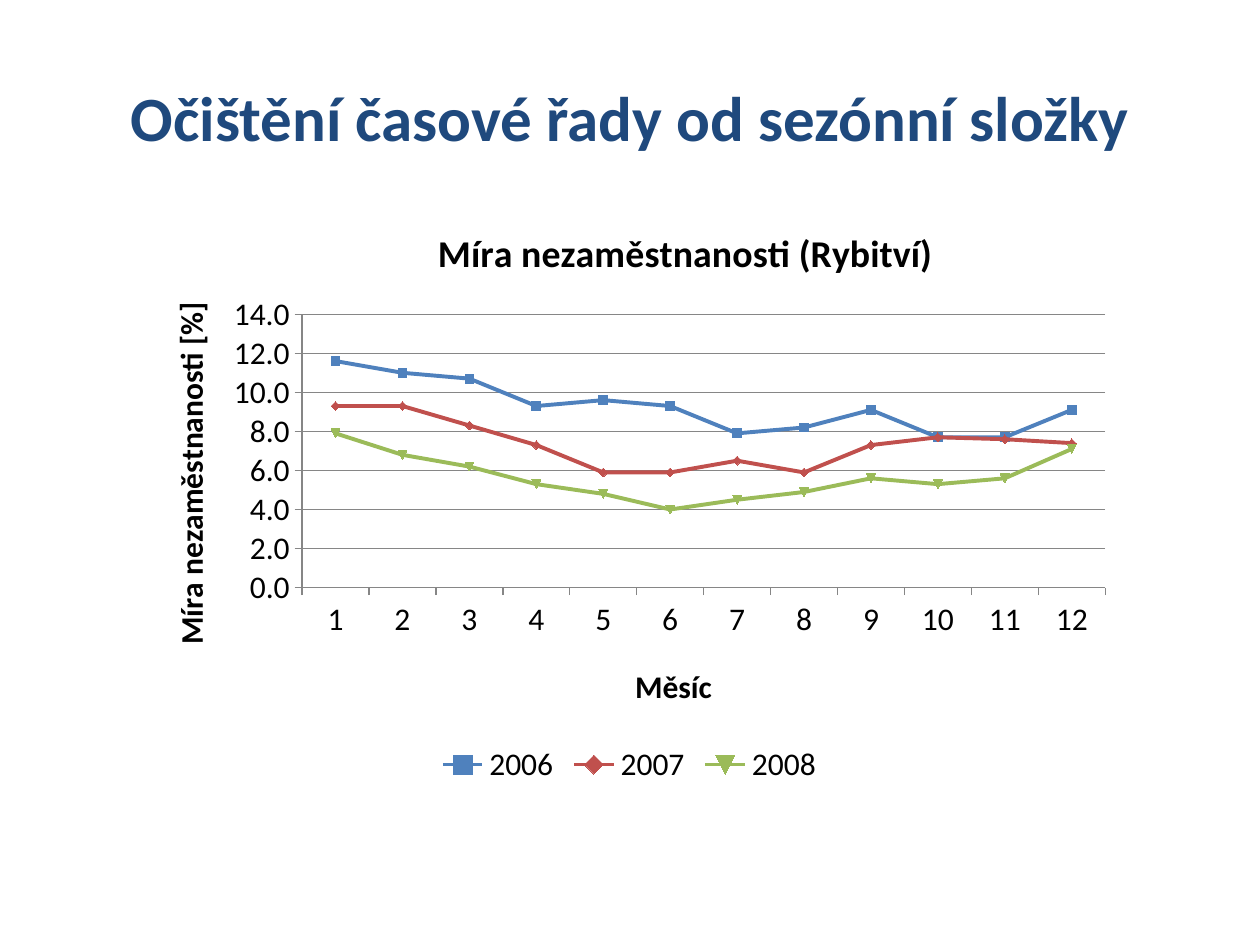
"""Build a slide with a line chart of monthly unemployment over three years."""
import pptx
import pptx.chart.data
import pptx.dml.color
import pptx.enum.chart
import pptx.enum.text
import pptx.oxml
import pptx.oxml.ns
import pptx.util

COLORS = {"heading": "1F497D", "text": "000000", "grid": "868686",
          "2006": "4F81BD", "2007": "C0504D", "2008": "9BBB59"}
FONT = "Calibri"
RATES = {
    "2006": (11.6, 11, 10.7, 9.3, 9.6, 9.3, 7.9, 8.2, 9.1, 7.7, 7.7, 9.1),
    "2007": (9.3, 9.3, 8.3, 7.3, 5.9, 5.9, 6.5, 5.9, 7.3, 7.7, 7.6, 7.4),
    "2008": (7.9, 6.8, 6.2, 5.3, 4.8, 4, 4.5, 4.9, 5.6, 5.3, 5.6, 7.1),
}


def style(font, size, color, bold):
    font.name = FONT
    font.size = pptx.util.Pt(size)
    font.bold = bold
    font.color.rgb = pptx.dml.color.RGBColor.from_string(COLORS[color])


def place(parent, index, **shares):
    for old in parent.findall(pptx.oxml.ns.qn("c:layout")):
        parent.remove(old)
    modes = '<c:xMode val="edge"/><c:yMode val="edge"/>'
    target = '<c:layoutTarget val="inner"/>' if "w" in shares else ""
    values = "".join(f'<c:{key} val="{share}"/>' for key, share in shares.items())
    parent.insert(index, pptx.oxml.parse_xml(
        f'<c:layout {pptx.oxml.ns.nsdecls("c")}><c:manualLayout>'
        f'{target}{modes}{values}</c:manualLayout></c:layout>'))


deck = pptx.Presentation()
deck.slide_width = pptx.util.Inches(10)
deck.slide_height = pptx.util.Inches(7.5)
slide = deck.slides.add_slide(deck.slide_layouts[6])
width, height = deck.slide_width, deck.slide_height

heading = slide.shapes.add_textbox(
    int(width * 0.05), int(height * 0.04), int(width * 0.9), int(height / 6)).text_frame
heading.word_wrap = True
heading.vertical_anchor = pptx.enum.text.MSO_ANCHOR.MIDDLE
heading.text = "Očištění časové řady od sezónní složky"
heading.paragraphs[0].alignment = pptx.enum.text.PP_ALIGN.CENTER
style(heading.paragraphs[0].runs[0].font, 36, "heading", True)

unemployment = pptx.chart.data.CategoryChartData(number_format="0.0")
unemployment.categories = [str(month) for month in range(1, 13)]
for year, rates in RATES.items():
    unemployment.add_series(year, rates)

chart = slide.shapes.add_chart(
    pptx.enum.chart.XL_CHART_TYPE.LINE_MARKERS,
    pptx.util.Inches(1.06), pptx.util.Inches(1.55),
    pptx.util.Inches(7.87), pptx.util.Inches(4.72), unemployment).chart
style(chart.font, 18, "text", False)
months, percent = chart.category_axis, chart.value_axis

for owner, title, wording, size, x, y in (
        (chart, chart.chart_title, "Míra nezaměstnanosti (Rybitví)", 21.6, 0.3, 0.04),
        (months, months.axis_title, "Měsíc", 18, 0.5, 0.78),
        (percent, percent.axis_title, "Míra nezaměstnanosti [%]", 18, 0.03, 0.17)):
    owner.has_title = True
    title.text_frame.text = wording
    style(title.text_frame.paragraphs[0].runs[0].font, size, "text", True)
    place(title._element, 1, x=x, y=y)

place(chart._chartSpace.chart.plotArea, 0, x=0.17, y=0.2, w=0.81, h=0.46)

percent.minimum_scale = 0
percent.maximum_scale = 14
percent.major_unit = 2
percent.has_major_gridlines = True
percent.tick_labels.number_format = "0.0"
percent.tick_labels.number_format_is_linked = False
for axis in (months, percent):
    axis.major_tick_mark = pptx.enum.chart.XL_TICK_MARK.OUTSIDE
    style(axis.tick_labels.font, 18, "text", False)
for rule in (months.format.line, percent.format.line, percent.major_gridlines.format.line):
    rule.width = pptx.util.Pt(0.75)
    rule.color.rgb = pptx.dml.color.RGBColor.from_string(COLORS["grid"])

chart.plots[0].vary_by_categories = False
for series in chart.plots[0].series:
    tint = pptx.dml.color.RGBColor.from_string(COLORS[series.name])
    series.smooth = False
    series.format.line.width = pptx.util.Pt(2.25)
    series.format.line.color.rgb = tint
    series.marker.size = 5
    series.marker.format.fill.solid()
    series.marker.format.fill.fore_color.rgb = tint
    series.marker.format.line.color.rgb = tint

chart.has_legend = True
chart.legend.position = pptx.enum.chart.XL_LEGEND_POSITION.BOTTOM
chart.legend.include_in_layout = False
style(chart.legend.font, 18, "text", False)

deck.save("out.pptx")
